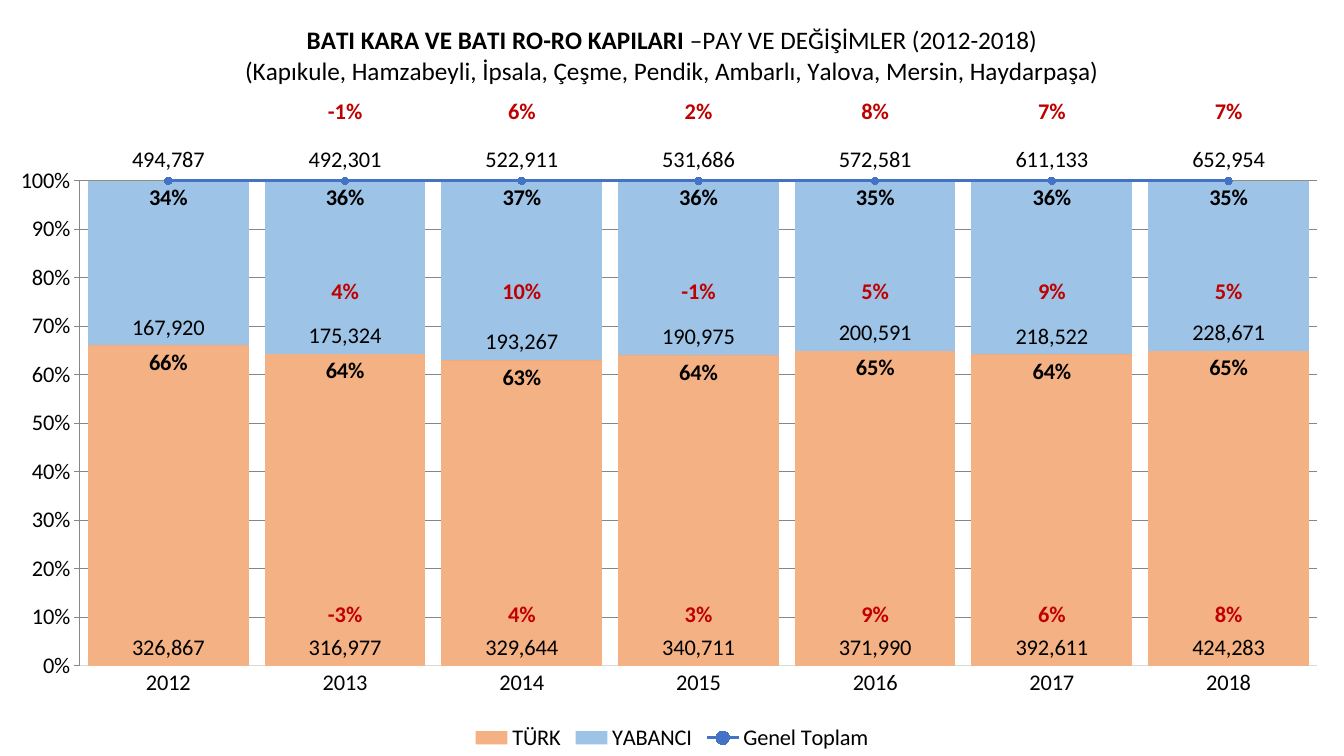
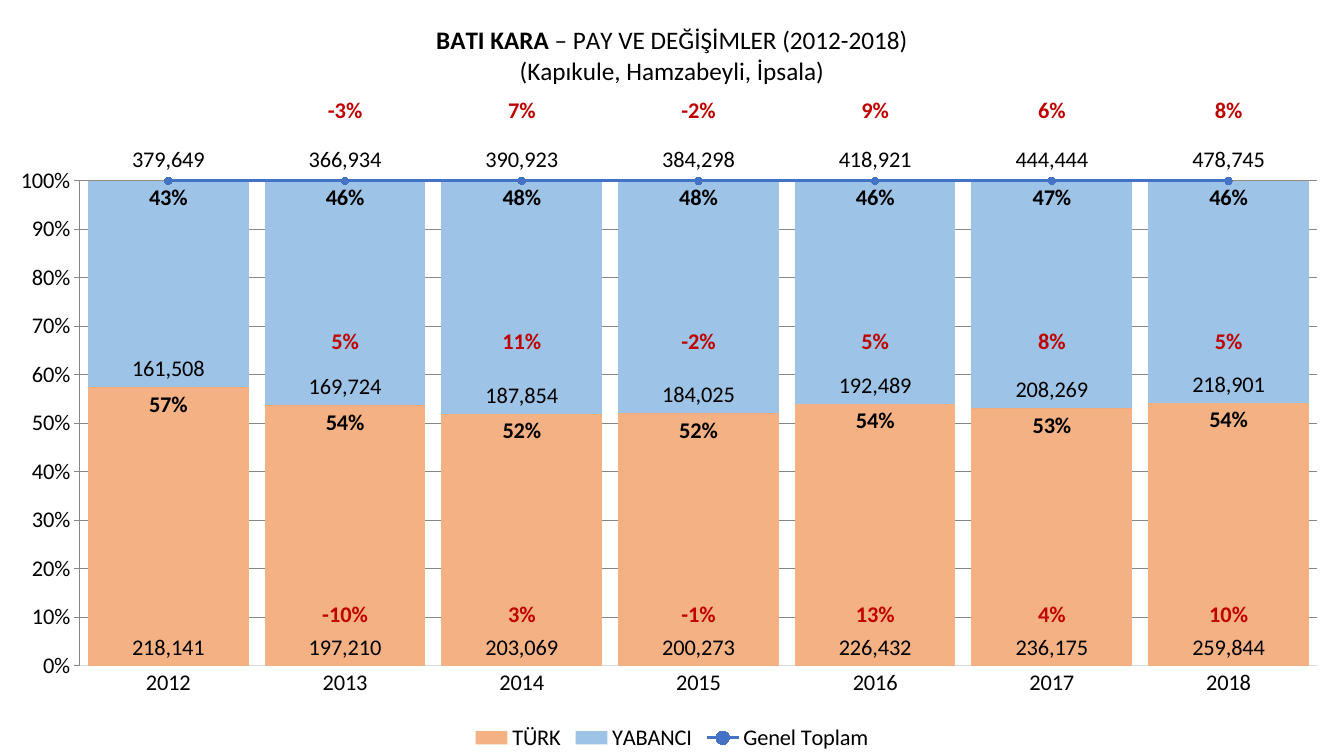
from lxml import etree
from pptx import Presentation
from pptx.chart.data import CategoryChartData
from pptx.dml.color import RGBColor
from pptx.enum.chart import (XL_CHART_TYPE as ChartType, XL_LABEL_POSITION as LabelPos,
                             XL_LEGEND_POSITION as LegendPos, XL_MARKER_STYLE as Marker,
                             XL_TICK_MARK as Tick)
from pptx.enum.text import MSO_ANCHOR as Anchor, PP_ALIGN as Align
from pptx.oxml import parse_xml
from pptx.oxml.ns import nsdecls, qn
from pptx.util import Emu, Pt

PAGE_W, PAGE_H = 1344, 756
PLOT = (80, 181, 1237, 485)
ROW_H = 37
FONT = "Calibri"
BLACK, RED, GREY = "000000", "C00000", "D9D9D9"
ORANGE, SKY, BLUE = "F4B183", "9DC3E6", "4472C4"
SHARE_COLOURS = ("ED7D31", "FFC000")
YEARS = [str(year) for year in range(2012, 2019)]

PAGES = [
    dict(heading=("BATI KARA VE BATI RO-RO KAPILARI ", "–PAY VE DEĞİŞİMLER (2012-2018)"),
         gates="(Kapıkule, Hamzabeyli, İpsala, Çeşme, Pendik, Ambarlı, Yalova, Mersin, Haydarpaşa)",
         turkish=[326867, 316977, 329644, 340711, 371990, 392611, 424283],
         foreign=[167920, 175324, 193267, 190975, 200591, 218522, 228671],
         growth_rows=(111, 291, 614)),
    dict(heading=("BATI KARA", " – PAY VE DEĞİŞİMLER (2012-2018)"),
         gates="(Kapıkule, Hamzabeyli, İpsala)",
         turkish=[218141, 197210, 203069, 200273, 226432, 236175, 259844],
         foreign=[161508, 169724, 187854, 184025, 192489, 208269, 218901],
         growth_rows=(110, 341, 614)),
]


def px(length):
    return Emu(round(length * 12192000 / PAGE_W))


def colour(code):
    return RGBColor.from_string(code)


def style_font(font, size=16, bold=False, code=BLACK):
    font.name, font.size, font.bold = FONT, Pt(size), bold
    font.color.rgb = colour(code)


def chart_xml(tag, body):
    return parse_xml(f"<c:{tag} {nsdecls('c')}>{body}</c:{tag}>")


def manual_layout(x, y, w, h):
    """Layout of the inner plot area, given in px of the page."""
    parts = dict(x=x / PAGE_W, y=y / PAGE_H, w=w / PAGE_W, h=h / PAGE_H)
    body = "".join(f'<c:{key}Mode val="edge"/>' for key in "xy")
    body += "".join(f'<c:{key} val="{part:.4f}"/>' for key, part in parts.items())
    return chart_xml("layout", '<c:manualLayout><c:layoutTarget val="inner"/>'
                               f"{body}</c:manualLayout>")


def move_last_series_to_line(chart):
    """Turn the last column series into a 100% line on hidden second axes."""
    plot_area = chart._chartSpace.find(".//" + qn("c:plotArea"))
    bars = plot_area.find(qn("c:barChart"))
    series = bars.findall(qn("c:ser"))[-1]
    for unused in series.findall(qn("c:invertIfNegative")):
        series.remove(unused)
    line = chart_xml("lineChart", '<c:grouping val="percentStacked"/><c:varyColors val="0"/>'
                                  '<c:marker val="1"/><c:axId val="501"/><c:axId val="502"/>')
    line.insert(2, series)
    bars.addnext(line)
    last_axis = plot_area.find(qn("c:valAx"))
    for tag, own, other, side, crosses in (("valAx", 502, 501, "r", "max"),
                                           ("catAx", 501, 502, "b", "autoZero")):
        last_axis.addnext(chart_xml(tag, (
            f'<c:axId val="{own}"/><c:scaling><c:orientation val="minMax"/></c:scaling>'
            f'<c:delete val="1"/><c:axPos val="{side}"/>'
            f'<c:crossAx val="{other}"/><c:crosses val="{crosses}"/>')))
    for old in plot_area.findall(qn("c:layout")):
        plot_area.remove(old)
    plot_area.insert(0, manual_layout(*PLOT))


def label_series(series, number_format, position, bold=False):
    labels = series.data_labels
    labels.show_value = True
    labels.number_format, labels.number_format_is_linked = number_format, False
    labels.position = position
    style_font(labels.font, bold=bold)


def style_series(chart):
    bars, line = chart.plots
    bars.gap_width, bars.overlap = 10, 100
    bars.vary_by_categories = False
    fills = (ORANGE, SHARE_COLOURS[0], SKY, SHARE_COLOURS[1])
    for index, (series, code) in enumerate(zip(bars.series, fills)):
        series.format.fill.solid()
        series.format.fill.fore_color.rgb = colour(code)
        if index % 2:
            label_series(series, "0%", LabelPos.INSIDE_END, bold=True)
        else:
            label_series(series, "#,##0", LabelPos.INSIDE_BASE)
    total = line.series[0]
    total.smooth = False
    total.format.line.color.rgb = colour(BLUE)
    total.format.line.width = Pt(2.25)
    total.marker.style, total.marker.size = Marker.CIRCLE, 5
    total.marker.format.fill.solid()
    total.marker.format.fill.fore_color.rgb = colour(BLUE)
    total.marker.format.line.color.rgb = colour(BLUE)
    label_series(total, "#,##0", LabelPos.ABOVE)


def style_axes(chart):
    years, percent = chart.category_axis, chart.value_axis
    for axis in (years, percent):
        axis.major_tick_mark = axis.minor_tick_mark = Tick.NONE
        style_font(axis.tick_labels.font)
    percent.major_unit = 0.1
    percent.tick_labels.number_format = "0%"
    percent.tick_labels.number_format_is_linked = False
    percent.format.line.fill.background()
    for rule in (years.format.line, percent.major_gridlines.format.line):
        rule.color.rgb = colour(GREY)
        rule.width = Pt(0.75)


def add_title(chart, heading, gates):
    frame = chart.chart_title.text_frame
    chart.chart_title.include_in_layout = False
    frame.text = heading[0]
    first = frame.paragraphs[0]
    first.add_run().text = heading[1]
    second = frame.add_paragraph()
    second.text = gates
    for span in (*first.runs, *second.runs):
        style_font(span.font, size=18, bold=span.text == heading[0])


def add_legend(chart):
    """Legend at the bottom, without the two share series."""
    chart.has_legend = True
    legend = chart.legend
    legend.position, legend.include_in_layout = LegendPos.BOTTOM, False
    style_font(legend.font)
    place = legend._element.find(qn("c:legendPos"))
    for index in (3, 1):
        place.addnext(chart_xml("legendEntry", f'<c:idx val="{index}"/><c:delete val="1"/>'))


def add_share_chart(page, heading, gates, turkish, foreign, totals):
    data = CategoryChartData()
    data.categories = YEARS
    for name, counts in (("TÜRK", turkish), ("YABANCI", foreign)):
        data.add_series(name, counts)
        data.add_series(f"{name} payı", [round(n / total, 2) for n, total in zip(counts, totals)])
    data.add_series("Genel Toplam", totals)
    chart = page.shapes.add_chart(ChartType.COLUMN_STACKED_100, 0, 0,
                                  px(PAGE_W), px(PAGE_H), data).chart
    style_font(chart.font)
    move_last_series_to_line(chart)
    style_series(chart)
    style_axes(chart)
    add_title(chart, heading, gates)
    add_legend(chart)


def add_growth_row(page, middle, counts):
    """Yearly change of counts, centred over each column from the second on."""
    left, _, width, _ = PLOT
    step = width / len(YEARS)
    for index, (before, now) in enumerate(zip(counts, counts[1:]), start=1):
        box = page.shapes.add_textbox(px(left + index * step), px(middle - ROW_H / 2),
                                      px(step), px(ROW_H))
        frame = box.text_frame
        frame.word_wrap, frame.vertical_anchor = True, Anchor.MIDDLE
        frame.text = f"{now / before - 1:.0%}"
        para = frame.paragraphs[0]
        para.alignment = Align.CENTER
        style_font(para.runs[0].font, bold=True, code=RED)


def add_page(deck, heading, gates, turkish, foreign, growth_rows):
    page = deck.slides.add_slide(deck.slide_layouts[6])
    totals = [sum(pair) for pair in zip(turkish, foreign)]
    add_share_chart(page, heading, gates, turkish, foreign, totals)
    for middle, counts in zip(growth_rows, (totals, foreign, turkish)):
        add_growth_row(page, middle, counts)


def main():
    deck = Presentation()
    deck.slide_width, deck.slide_height = px(PAGE_W), px(PAGE_H)
    for content in PAGES:
        add_page(deck, **content)
    deck.save("out.pptx")


if __name__ == "__main__":
    main()
